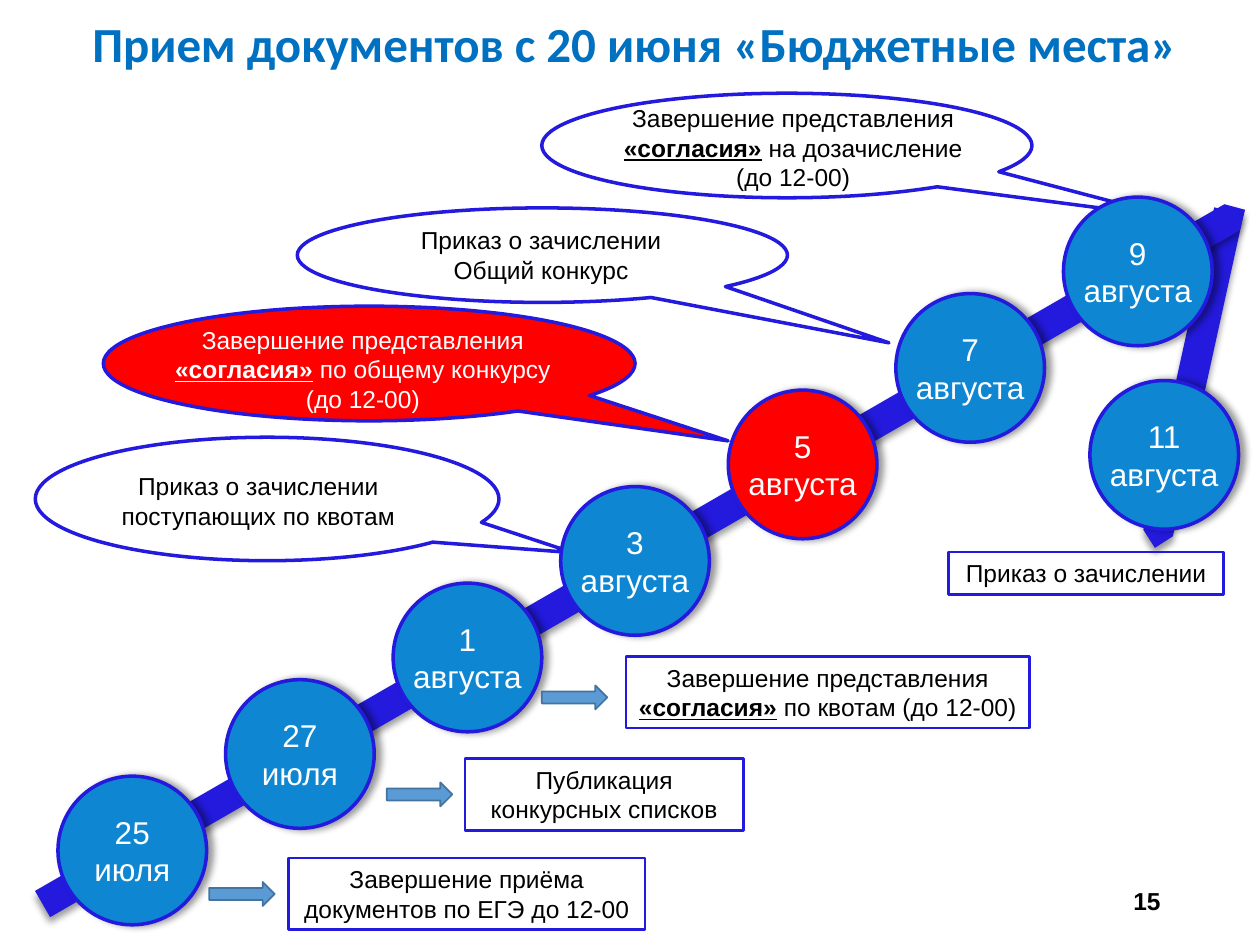
"""Build the admission timeline slide for budget-funded places."""
from lxml import etree
from pptx import Presentation
from pptx.dml.color import RGBColor
from pptx.enum.shapes import MSO_SHAPE as Shape
from pptx.enum.text import MSO_ANCHOR as Anchor, MSO_AUTO_SIZE as AutoSize, PP_ALIGN as Align
from pptx.oxml.ns import qn
from pptx.util import Inches, Pt

INK = RGBColor(0x23, 0x1A, 0xDD)
BLUE = RGBColor(0x0E, 0x86, 0xD2)
RED = RGBColor(0xFF, 0x00, 0x00)
TITLE_BLUE = RGBColor(0x00, 0x70, 0xC0)
ARROW = RGBColor(0x5B, 0x9B, 0xD5)
ARROW_EDGE = RGBColor(0x43, 0x73, 0x9E)
BLACK = RGBColor(0x00, 0x00, 0x00)
WHITE = RGBColor(0xFF, 0xFF, 0xFF)


def write(shape, text, size=14, font="Arial", color=BLACK, bold=False, align=Align.CENTER,
          anchor=Anchor.TOP, wrap=True, grow=True):
    """Fill a shape with lines of text; parts between bars are bold and underlined."""
    frame = shape.text_frame
    frame.word_wrap = wrap
    frame.vertical_anchor = anchor
    frame.auto_size = AutoSize.SHAPE_TO_FIT_TEXT if grow else AutoSize.NONE
    frame.margin_left = frame.margin_right = Inches(0.1)
    frame.margin_top = frame.margin_bottom = Inches(0.05)
    for i, line in enumerate(text.split("\n")):
        paragraph = frame.add_paragraph() if i else frame.paragraphs[0]
        paragraph.alignment = align
        for j, part in enumerate(line.split("|")):
            run = paragraph.add_run()
            run.text = part
            run.font.size, run.font.name = Pt(size), font
            run.font.color.rgb = color
            run.font.bold = bold or j % 2 == 1
            run.font.underline = j % 2 == 1


def draw(kind, left, top, width, height, fill=None, line=None, weight=2, shadow_angle=None):
    """Add a preset shape, with a soft shadow when an angle is given."""
    shape = slide.shapes.add_shape(kind, Inches(left), Inches(top), Inches(width), Inches(height))
    if fill is None:
        shape.fill.background()
    else:
        shape.fill.solid()
        shape.fill.fore_color.rgb = fill
    if line is None:
        shape.line.fill.background()
    else:
        shape.line.color.rgb = line
        shape.line.width = Pt(weight)
    shape.shadow.inherit = False
    if shadow_angle is not None:
        effects = shape.element.spPr.find(qn("a:effectLst"))
        shadow = etree.SubElement(effects, qn("a:outerShdw"), blurRad=str(Pt(4)), dist=str(Pt(3)),
                                  dir=str(shadow_angle * 60000), algn="ctr", rotWithShape="0")
        tint = etree.SubElement(shadow, qn("a:srgbClr"), val="000000")
        etree.SubElement(tint, qn("a:alpha"), val="40000")
    return shape


prs = Presentation()
prs.slide_width, prs.slide_height = Inches(10), Inches(7.5)
slide = prs.slides.add_slide(prs.slide_layouts[5])

final_path = draw(Shape.PENTAGON, 8.09, 2.89, 2.74, 0.24, fill=INK, shadow_angle=90)
final_path.rotation = 102.4

title = slide.shapes.title
title.left, title.top, title.width, title.height = map(Inches, (0.58, 0.06, 8.91, 0.57))
write(title, "Прием документов с 20 июня «Бюджетные места»", size=28, font="Calibri",
      color=TITLE_BLUE, bold=True, wrap=False)

notes = [
    (2.29, 6.81, 2.83, 0.57, "Завершение приёма документов по ЕГЭ до 12-00"),
    (3.69, 6.02, 2.21, 0.57, "Публикация конкурсных списков"),
    (4.97, 5.21, 3.2, 0.57, "Завершение представления |«согласия»| по квотам (до 12-00)"),
    (7.53, 4.38, 2.18, 0.34, "Приказ о зачислении"),
]
for *place, text in notes:
    write(draw(Shape.RECTANGLE, *place, line=INK, weight=1.5), text)

callouts = [
    ((4.3, 0.74, 3.89, 0.83), (0.787, 0.688), (4.42, 0.77, 3.75, 0.81), None, BLACK,
     "Завершение представления |«согласия»| на дозачисление\n(до 12-00)"),
    ((2.36, 1.65, 3.89, 0.75), (0.707, 0.928), (2.88, 1.74, 2.83, 0.57), None, BLACK,
     "Приказ о зачислении\nОбщий конкурс"),
    ((0.82, 2.43, 4.22, 0.91), (0.675, 0.675), (1.02, 2.53, 3.72, 0.81), RED, WHITE,
     "Завершение представления |«согласия»| по общему конкурсу\n(до 12-00)"),
    ((0.28, 3.47, 3.68, 0.98), (0.66, 0.435), (0.43, 3.69, 3.24, 0.57), None, BLACK,
     "Приказ о зачислении поступающих по квотам"),
]
for bubble_place, tip, text_place, fill, color, text in callouts:
    bubble = draw(Shape.OVAL_CALLOUT, *bubble_place, fill=fill, line=INK)
    bubble.adjustments[0], bubble.adjustments[1] = tip
    write(slide.shapes.add_textbox(*map(Inches, text_place)), text, color=color)

main_path = draw(Shape.PENTAGON, -0.4, 4.3, 11.02, 0.24, fill=INK, shadow_angle=90)
main_path.rotation = 330

dates = ["25\nиюля", "27\nиюля", "1\nавгуста", "3\nавгуста", "5\nавгуста", "7\nавгуста", "9\nавгуста"]
milestones = [(0.46 + 1.33 * i, 6.16 - 0.766 * i, date) for i, date in enumerate(dates)]
milestones.append((8.65, 3.02, "11\nавгуста"))
for left, top, date in milestones:
    fill = RED if date.startswith("5") else BLUE
    circle = draw(Shape.OVAL, left, top, 1.18, 1.18, fill=fill, line=INK, shadow_angle=0)
    write(circle, date, size=18, color=WHITE, anchor=Anchor.MIDDLE, wrap=False, grow=False)

for left, top in [(1.66, 7), (3.07, 6.21), (4.3, 5.44)]:
    draw(Shape.RIGHT_ARROW, left, top, 0.52, 0.19, fill=ARROW, line=ARROW_EDGE, weight=1)

page_number = slide.shapes.add_textbox(Inches(7.06), Inches(6.95), Inches(2.25), Inches(0.4))
write(page_number, "15", bold=True, align=Align.RIGHT, anchor=Anchor.MIDDLE, grow=False)

prs.save("out.pptx")
